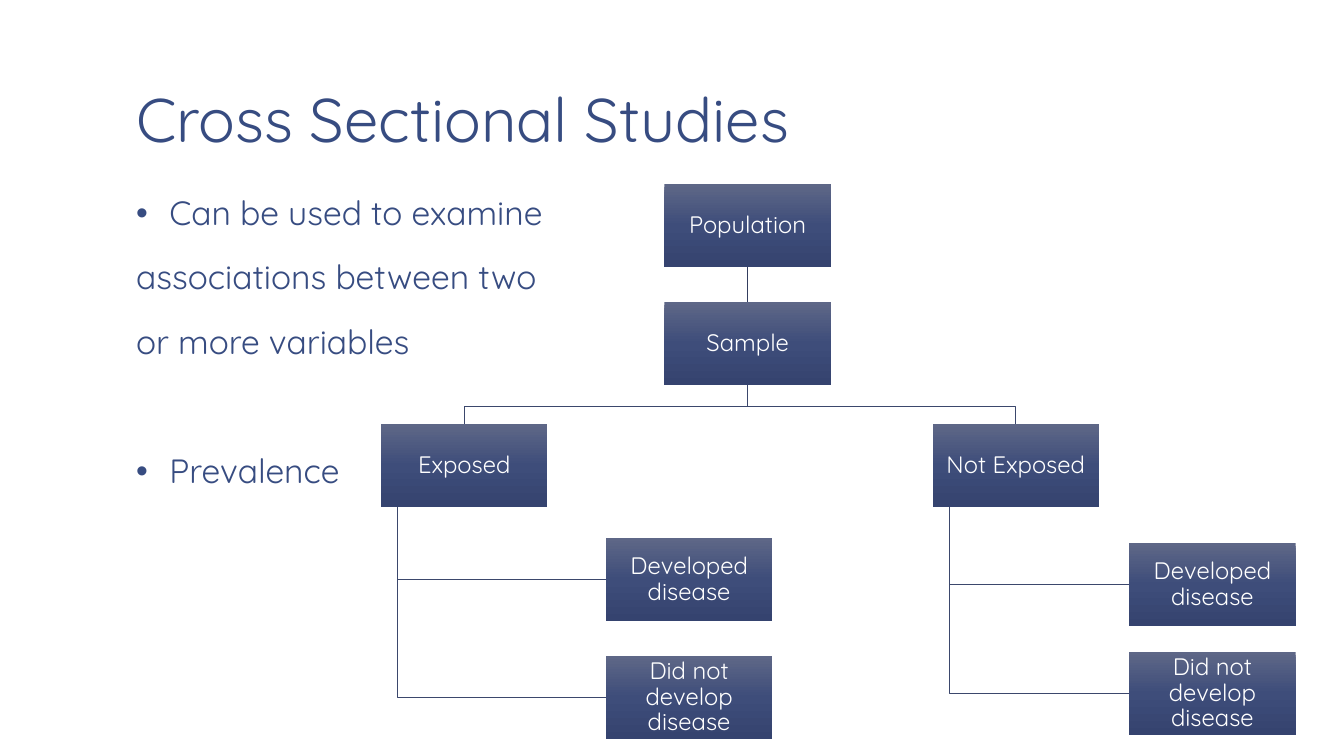
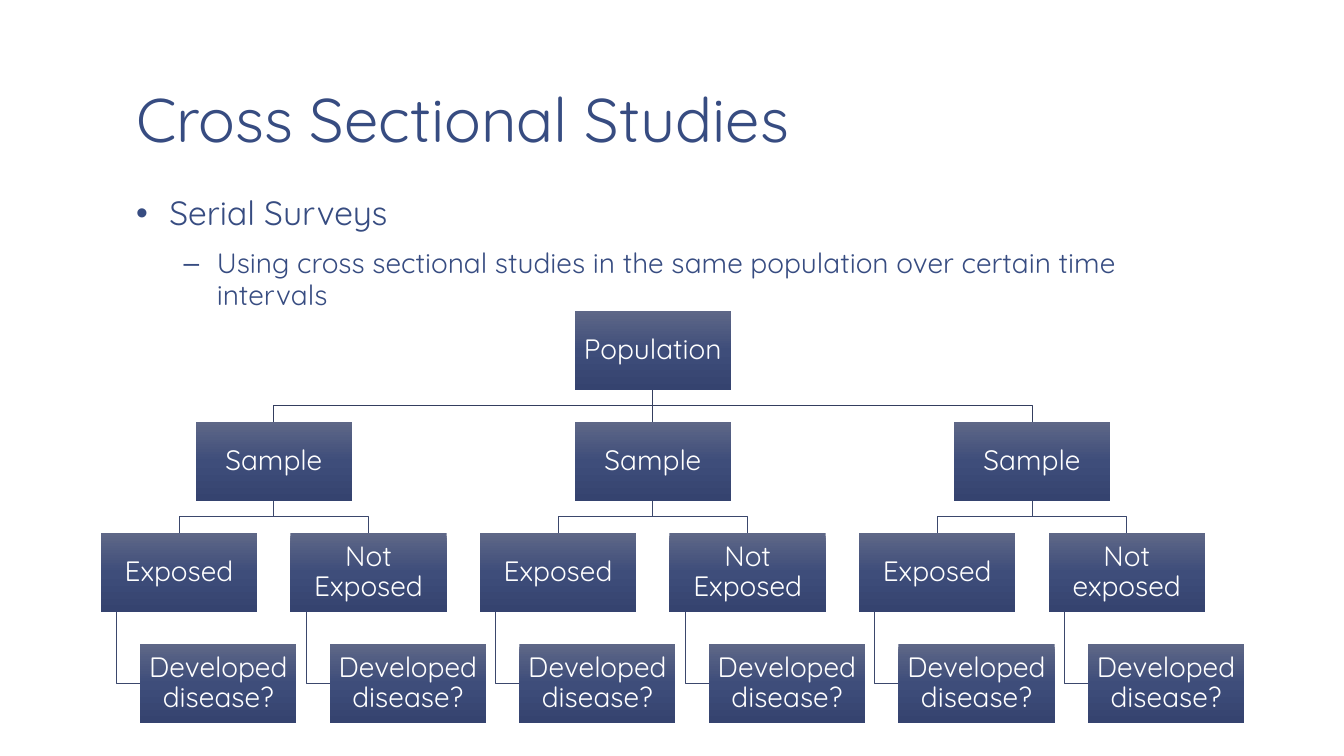
from lxml.etree import SubElement
from pptx import Presentation
from pptx.dml.color import RGBColor
from pptx.enum.shapes import MSO_CONNECTOR, MSO_SHAPE
from pptx.enum.text import MSO_ANCHOR, MSO_AUTO_SIZE, PP_ALIGN
from pptx.oxml import parse_xml
from pptx.oxml.ns import nsdecls, qn
from pptx.util import Inches, Pt

FONT = "Quicksand"
HUES = {
    "text": "374C81",
    "white": "FFFFFF",
    "top": "5E6787",
    "mid": "3E4D7A",
    "base": "35436F",
    "root": "343E5F",
    "line": "3B476C",
}
STOPS = "".join(
    f'<a:gs pos="{pos}"><a:srgbClr val="{HUES[name]}"/></a:gs>'
    for pos, name in ((0, "top"), (50000, "mid"), (100000, "base"))
)
GRAD = (
    f'<a:gradFill {nsdecls("a")} rotWithShape="1"><a:gsLst>{STOPS}</a:gsLst>'
    '<a:lin ang="5400000" scaled="0"/></a:gradFill>'
)


def style(para, size, hue, space):
    para.line_spacing = space
    for run in para.runs:
        run.font.name = FONT
        run.font.size = Pt(size)
        run.font.color.rgb = RGBColor.from_string(HUES[hue])


def join(slide, points, hue):
    spots = [(Inches(x), Inches(y)) for x, y in points]
    if len(spots) == 2:
        wire = slide.shapes.add_connector(MSO_CONNECTOR.STRAIGHT, *spots[0], *spots[1])
        SubElement(wire._element.spPr, qn("a:effectLst"))
    else:
        pen = slide.shapes.build_freeform(*spots[0])
        pen.add_line_segments(spots[1:], close=False)
        wire = pen.convert_to_shape()
        wire.fill.background()
        wire.shadow.inherit = False
    wire.line.color.rgb = RGBColor.from_string(HUES[hue])
    wire.line.width = Pt(0.5)


study = [
    ("Population", 6.59, 1.83, None, ""),
    ("Sample", 6.59, 3, 0, "drop"),
    ("Exposed", 3.78, 4.21, 1, "drop"),
    ("Not Exposed", 9.25, 4.21, 1, "drop"),
    ("Developed disease", 6.01, 5.34, 2, "hang"),
    ("Did not develop disease", 6.01, 6.51, 2, "hang"),
    ("Developed disease", 11.2, 5.39, 3, "hang"),
    ("Did not develop disease", 11.2, 6.47, 3, "hang"),
]

left, step = 1, 1.88
rows = [3.09 + 1.1 * i for i in range(4)]
series = [("Population", left + 2.5 * step, rows[0], None, "")]
for i, label in enumerate(("Not Exposed", "Not Exposed", "Not exposed")):
    start = left + 2 * step * i
    top = len(series)
    series.append(("Sample", start + step / 2, rows[1], 0, "drop"))
    for j, name in enumerate(("Exposed", label)):
        x = start + step * j
        series.append((name, x, rows[2], top, "drop"))
        series.append(("Developed disease?", x + 0.39, rows[3], len(series) - 1, "hang"))

pages = [
    {
        "body": [
            ("Can be used to examine", "•", 0.33, 24, 0),
            ("associations between two", "", 0, 24, 18.7),
            ("or more variables", "", 0, 24, 18.7),
            ("Prevalence", "•", 0.33, 24, 64.8),
        ],
        "nodes": study, "width": 1.65, "height": 0.82, "size": 17,
    },
    {
        "body": [
            ("Serial Surveys", "•", 0.33, 24, 0),
            ("Using cross sectional studies in the same population over certain time intervals",
             "–", 0.8, 20, 10.7),
        ],
        "nodes": series, "width": 1.55, "height": 0.78, "size": 20,
    },
]

deck = Presentation()
deck.slide_width, deck.slide_height = Inches(13.33), Inches(7.5)

for page in pages:
    slide = deck.slides.add_slide(deck.slide_layouts[5])
    title = slide.shapes.title
    title.left, title.top = Inches(1.22), Inches(0.08)
    title.width, title.height = Inches(11.11), Inches(1.53)
    body = slide.shapes.add_textbox(Inches(1.22), Inches(1.86), Inches(11.11), Inches(4.89))
    for frame in (title.text_frame, body.text_frame):
        frame.word_wrap = True
        frame.auto_size = MSO_AUTO_SIZE.NONE
        frame.margin_left = frame.margin_right = Inches(0.13)
        frame.margin_top = frame.margin_bottom = Inches(0.07)
    title.text_frame.text = "Cross Sectional Studies"
    title.text_frame.vertical_anchor = MSO_ANCHOR.BOTTOM
    head = title.text_frame.paragraphs[0]
    head.alignment = PP_ALIGN.LEFT
    style(head, 44, "text", 0.85)

    for i, (text, mark, inset, size, before) in enumerate(page["body"]):
        para = body.text_frame.add_paragraph() if i else body.text_frame.paragraphs[0]
        para.text = text
        if mark:
            props = para._p.get_or_add_pPr()
            props.set("marL", str(Inches(inset)))
            props.set("indent", str(-Inches(0.33)))
            SubElement(props, qn("a:buFont")).set("typeface", "Arial")
            SubElement(props, qn("a:buChar")).set("char", mark)
        para.level = int(mark == "–")
        para.space_before = Pt(before)
        style(para, size, "text", 0.95)

    nodes, width, height = page["nodes"], page["width"], page["height"]
    for text, x, y, owner, kind in nodes:
        if owner is None:
            continue
        px, py = nodes[owner][1:3]
        foot = py + height
        if kind == "hang":
            trunk, mid = px + width / 10, y + height / 2
            points = [(trunk, foot), (trunk, mid), (x, mid)]
        else:
            stem, end, bus = px + width / 2, x + width / 2, y - 0.22 * height
            points = [(stem, foot), (end, y)]
            if abs(stem - end) > 0.01:
                points[1:1] = [(stem, bus), (end, bus)]
        join(slide, points, "line" if owner else "root")

    for text, x, y, owner, kind in nodes:
        box = slide.shapes.add_shape(
            MSO_SHAPE.RECTANGLE, Inches(x), Inches(y), Inches(width), Inches(height))
        box._element.spPr.append(parse_xml(GRAD))
        box.line.fill.background()
        box.shadow.inherit = False
        frame = box.text_frame
        frame.margin_left = frame.margin_right = Inches(0.01)
        frame.margin_top = frame.margin_bottom = Inches(0.01)
        frame.vertical_anchor = MSO_ANCHOR.MIDDLE
        frame.text = text
        para = frame.paragraphs[0]
        para.alignment = PP_ALIGN.CENTER
        style(para, page["size"], "white", 0.9)

deck.save("out.pptx")
